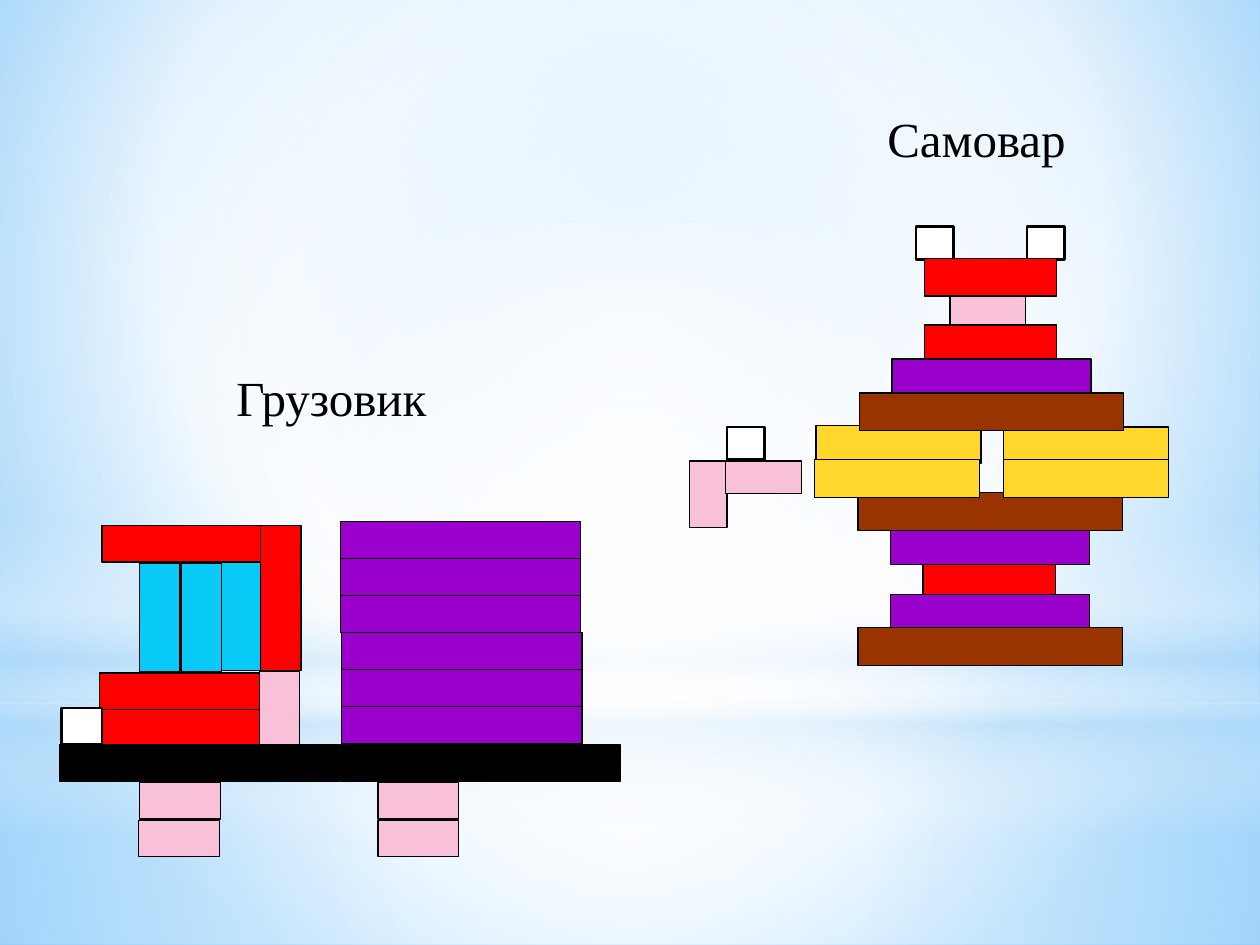
from typing import NamedTuple

from lxml import etree
from pptx import Presentation
from pptx.dml.color import RGBColor
from pptx.enum.shapes import MSO_SHAPE
from pptx.enum.text import MSO_ANCHOR, PP_ALIGN
from pptx.oxml.ns import qn
from pptx.util import Inches, Pt

RECTANGLE = MSO_SHAPE.RECTANGLE
OVAL = MSO_SHAPE.OVAL
CENTER = PP_ALIGN.CENTER
BOTTOM = MSO_ANCHOR.BOTTOM

BLACK, WHITE, RED = "000000", "FFFFFF", "FF0000"
PURPLE, BROWN, YELLOW = "9900CC", "993300", "FFD72D"
PINK, CYAN, SKY = "F8C0D9", "09CAF7", "B4DCFA"
FONT = "Times New Roman"
THICKNESS = 0.29
TIER_HEIGHT = 0.3


class Block(NamedTuple):
    left: float
    top: float
    width: float
    height: float
    color: str
    line: float = 0.75


class Stop(NamedTuple):
    position: int
    color: str
    alpha: int = 100


class Glow(NamedTuple):
    top: float
    height: float
    preset: int
    stops: list[Stop]
    focus: tuple | None


def rgb(color: str) -> RGBColor:
    return RGBColor.from_string(color)


def tier(center_x: float, center_y: float, width: float, color: str) -> Block:
    return Block(center_x - width / 2, center_y - TIER_HEIGHT / 2, width, TIER_HEIGHT, color)


def set_gradient(fill, element, stops: list[Stop], focus: tuple | None) -> None:
    fill.gradient()
    gradient = element.find(".//" + qn("a:gradFill"))
    for child in list(gradient):
        gradient.remove(child)
    stop_list = etree.SubElement(gradient, qn("a:gsLst"))
    for stop in stops:
        mark = etree.SubElement(stop_list, qn("a:gs"), pos=str(stop.position * 1000))
        color = etree.SubElement(mark, qn("a:srgbClr"), val=stop.color)
        if stop.alpha < 100:
            etree.SubElement(color, qn("a:alpha"), val=str(stop.alpha * 1000))
    if focus is None:
        etree.SubElement(gradient, qn("a:lin"), ang=str(90 * 60000), scaled="0")
        return
    circle = etree.SubElement(gradient, qn("a:path"), path="circle")
    sides = {side: str(value * 1000) for side, value in zip("ltrb", focus)}
    etree.SubElement(circle, qn("a:fillToRect"), **sides)


def add_glow(slide, glow: Glow) -> None:
    shape = slide.shapes.add_shape(
        glow.preset, Inches(0), Inches(glow.top), Inches(10), Inches(glow.height)
    )
    shape.shadow.inherit = False
    shape.line.fill.background()
    set_gradient(shape.fill, shape.element, glow.stops, glow.focus)


def add_text(slide, text: str, *, left: float, top: float, width: float, height: float,
             size: float, color: str) -> None:
    box = slide.shapes.add_textbox(Inches(left), Inches(top), Inches(width), Inches(height))
    frame = box.text_frame
    frame.word_wrap = True
    frame.vertical_anchor = BOTTOM
    paragraph = frame.paragraphs[0]
    paragraph.alignment = CENTER
    paragraph.space_after = Pt(3)
    run = paragraph.add_run()
    run.text = text
    run.font.name = FONT
    run.font.size = Pt(size)
    run.font.color.rgb = rgb(color)


def add_figure(slide, blocks: list[Block]) -> None:
    group = slide.shapes.add_group_shape()
    for block in blocks:
        shape = group.shapes.add_shape(
            RECTANGLE, Inches(block.left), Inches(block.top),
            Inches(block.width), Inches(block.height)
        )
        shape.shadow.inherit = False
        shape.fill.solid()
        shape.fill.fore_color.rgb = rgb(block.color)
        shape.line.color.rgb = rgb(BLACK)
        shape.line.width = Pt(block.line)


def truck_blocks() -> list[Block]:
    cargo = [
        Block(2.7 if row < 3 else 2.71, 4.14 + row * 0.294, 1.91, THICKNESS, PURPLE)
        for row in range(6)
    ]
    windows = [
        Block(left, top, 0.32, 0.86, CYAN)
        for left, top in ((1.44, 4.47), (1.11, 4.47), (1.76, 4.46))
    ]
    cab = [
        Block(0.81, 4.17, 1.27, THICKNESS, RED),
        Block(0.8, 5.62, 1.27, THICKNESS, RED),
        Block(2.07, 4.17, 0.32, 1.15, RED),
        Block(0.79, 5.34, 1.27, THICKNESS, RED),
        Block(0.49, 5.62, 0.32, THICKNESS, WHITE, 1.5),
        Block(2.06, 5.33, 0.32, 0.58, PINK),
    ]
    chassis = [Block(left, 5.91, 2.22, THICKNESS, BLACK) for left in (0.47, 2.7)]
    wheels = [
        Block(left, top, 0.64, THICKNESS, PINK)
        for left, top in ((3.0, 6.51), (3.0, 6.21), (1.1, 6.51), (1.11, 6.21))
    ]
    return cargo + windows + cab + chassis + wheels


def samovar_blocks() -> list[Block]:
    base = [
        tier(7.85, 4.6, 1.05, RED),
        tier(7.86, 4.87, 1.58, PURPLE),
        tier(7.86, 4.33, 1.58, PURPLE),
        tier(7.86, 5.13, 2.1, BROWN),
    ]
    spout = [
        Block(5.47, 3.66, 0.3, 0.53, PINK),
        Block(5.76, 3.66, 0.6, 0.26, PINK),
        Block(5.77, 3.39, 0.3, 0.26, WHITE, 1.5),
    ]
    body = [tier(7.86, 4.06, 2.1, BROWN)] + [
        tier(x, y, 1.31, YELLOW)
        for x, y in ((7.13, 3.53), (8.62, 3.54), (8.62, 3.8), (7.12, 3.8))
    ]
    handles = [Block(left, 1.8, 0.3, 0.26, WHITE, 1.5) for left in (7.27, 8.15)]
    lid = [
        tier(7.86, 2.73, 1.05, RED),
        tier(7.86, 2.2, 1.05, RED),
        tier(7.87, 3.0, 1.58, PURPLE),
        tier(7.87, 3.27, 2.1, BROWN),
    ]
    return base + spout + body + [Block(7.54, 2.34, 0.6, 0.26, PINK)] + handles + lid


MIDDLE = (50, 50, 50, 50)
GLOWS = [
    Glow(5.58, 1.92, RECTANGLE,
         [Stop(0, WHITE, 91), Stop(37, WHITE, 76), Stop(100, SKY, 79)], MIDDLE),
    Glow(0, 5.58, RECTANGLE,
         [Stop(0, WHITE, 89), Stop(48, WHITE, 62), Stop(100, SKY, 79)], MIDDLE),
    Glow(4.12, 2.5, RECTANGLE,
         [Stop(0, WHITE, 0), Stop(29, WHITE, 30), Stop(45, SKY, 40),
          Stop(55, WHITE, 26), Stop(65, SKY, 60), Stop(100, WHITE, 0)], None),
    Glow(1.75, 5.58, OVAL, [Stop(0, WHITE), Stop(56, WHITE, 0)], MIDDLE),
]


def main() -> None:
    presentation = Presentation()
    presentation.slide_width = Inches(10)
    presentation.slide_height = Inches(7.5)
    slide = presentation.slides.add_slide(presentation.slide_layouts[6])
    set_gradient(slide.background.fill, slide.element,
                 [Stop(0, "9ED5FF"), Stop(60, WHITE), Stop(100, "5BB9FF")], (20, 10, 20, 60))
    for glow in GLOWS:
        add_glow(slide, glow)
    for title, left, top in (("Грузовик", 0.8, 2.73), ("Самовар", 5.92, 0.68)):
        add_text(slide, title, left=left, top=top, width=3.66, height=0.7, size=28, color=BLACK)
    add_figure(slide, truck_blocks())
    add_figure(slide, samovar_blocks())
    presentation.save("out.pptx")


if __name__ == "__main__":
    main()
